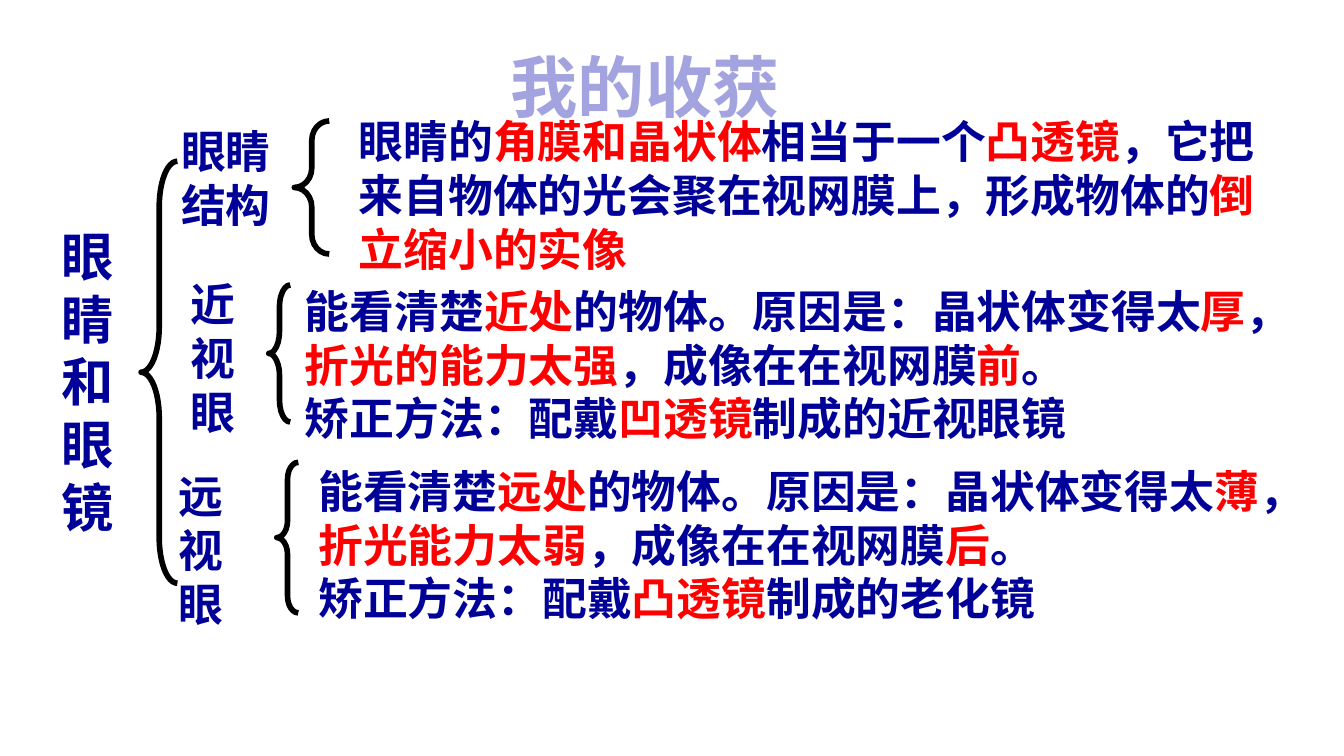
from lxml.etree import SubElement
from pptx import Presentation
from pptx.dml.color import RGBColor
from pptx.enum.shapes import MSO_SHAPE as Shape
from pptx.enum.text import MSO_ANCHOR as Anchor, MSO_AUTO_SIZE as AutoSize, PP_ALIGN as Align
from pptx.oxml.ns import qn
from pptx.util import Inches, Pt

FONT = "Noto Sans CJK SC"
LINE_HEIGHT = 1.2
COLORS = {"text": "000099", "key": "FF0000", "title": "A3A3E0", "brace": "000000"}

# Each box is left, top, width, height; parts are relative to the branch's left and top.
# Words between asterisks are key points.
BRANCHES = [
    {
        "origin": (1.25, 0.8),
        "label": ("眼睛结构", (0, 0.07, 1.06, 0.91)),
        "brace": (0.56, (0.94, 0.1, 0.26, 0.99)),
        "detail": (["眼睛的*角膜和晶状体*相当于一个*凸透镜*，它把来自物体的光会聚在视网膜上，"
                    "形成物体的*倒立缩小的实像*"], (1.32, 0, 6.92, 1.31)),
    },
    {
        "origin": (1.32, 2.01),
        "label": ("近视眼", (0, 0, 0.58, 1.31)),
        "brace": (1.03, (0.68, 0.11, 0.16, 1.02)),
        "detail": (["能看清楚*近处*的物体。原因是：晶状体变得太*厚*，*折光的能力太强*，"
                    "成像在在视网膜*前*。",
                    "矫正方法：配戴*凹透镜*制成的近视眼镜"], (0.85, 0.05, 7.83, 1.31)),
    },
    {
        "origin": (1.23, 3.4),
        "label": ("远视眼", (0, 0.04, 0.51, 1.31)),
        "brace": (0.79, (0.83, 0.04, 0.16, 1.12)),
        "detail": (["能看清楚*远处*的物体。原因是：晶状体变得太*薄*，*折光能力太弱*，"
                    "成像在在视网膜*后*。",
                    "矫正方法：配戴*凸透镜*制成的老化镜"], (1.04, 0, 7.56, 1.31)),
    },
]


def place(origin, box):
    """Turn a box relative to origin into slide lengths."""
    left, top, width, height = box
    return [Inches(v) for v in (origin[0] + left, origin[1] + top, width, height)]


def format_run(run, size, color):
    font = run.font
    font.size, font.bold, font.name = Pt(size), True, FONT
    font.color.rgb = RGBColor.from_string(COLORS[color])
    SubElement(run._r.get_or_add_rPr(), qn("a:ea"), typeface=FONT)


def fill_text(frame, lines, size, color="text", align=Align.LEFT, wrap=True):
    """Write the lines, with words between asterisks in the key colour."""
    frame.word_wrap = wrap
    frame.auto_size = AutoSize.NONE
    frame.vertical_anchor = Anchor.TOP
    frame.margin_left = frame.margin_right = Inches(0.1)
    frame.margin_top = frame.margin_bottom = Inches(0.05)
    for index, line in enumerate(lines):
        paragraph = frame.add_paragraph() if index else frame.paragraphs[0]
        paragraph.alignment = align
        paragraph.line_spacing = Pt(size * LINE_HEIGHT)
        paragraph.space_before = paragraph.space_after = Pt(0)
        for part, words in enumerate(line.split("*")):
            if words:
                run = paragraph.add_run()
                run.text = words
                format_run(run, size, "key" if part % 2 else color)


def add_text(slide, origin, box, lines, size=24):
    fill_text(slide.shapes.add_textbox(*place(origin, box)).text_frame, lines, size)


def add_brace(slide, origin, box, curve):
    brace = slide.shapes.add_shape(Shape.LEFT_BRACE, *place(origin, box))
    brace.adjustments[0] = curve
    brace.adjustments[1] = 0.5
    brace.shadow.inherit = False
    brace.fill.background()
    brace.line.color.rgb = RGBColor.from_string(COLORS["brace"])
    brace.line.width = Pt(3)


def add_title(slide, box):
    title = slide.shapes.title
    title.left, title.top, title.width, title.height = place((0, 0), box)
    fill_text(title.text_frame, ["我的收获"], 36, "title", Align.CENTER, wrap=False)


def add_root(slide, origin):
    """Add the overall topic and the brace that spans all branches."""
    add_text(slide, origin, (0, 0.42, 0.62, 2.46), ["眼睛和眼镜"], 28)
    add_brace(slide, origin, (0.69, 0, 0.27, 3.14), 1.25)


def add_branch(slide, origin, label, brace, detail):
    name, label_box = label
    curve, brace_box = brace
    lines, detail_box = detail
    add_text(slide, origin, label_box, [name])
    add_brace(slide, origin, brace_box, curve)
    add_text(slide, origin, detail_box, lines)


def main():
    deck = Presentation()
    deck.slide_width = Inches(10)
    deck.slide_height = deck.slide_width * 9 // 16
    slide = deck.slides.add_slide(deck.slide_layouts.get_by_name("Title Only"))
    add_title(slide, (3.69, 0.29, 2.22, 0.71))
    add_root(slide, (0.36, 1.2))
    for branch in BRANCHES:
        add_branch(slide, **branch)
    deck.save("out.pptx")


if __name__ == "__main__":
    main()
